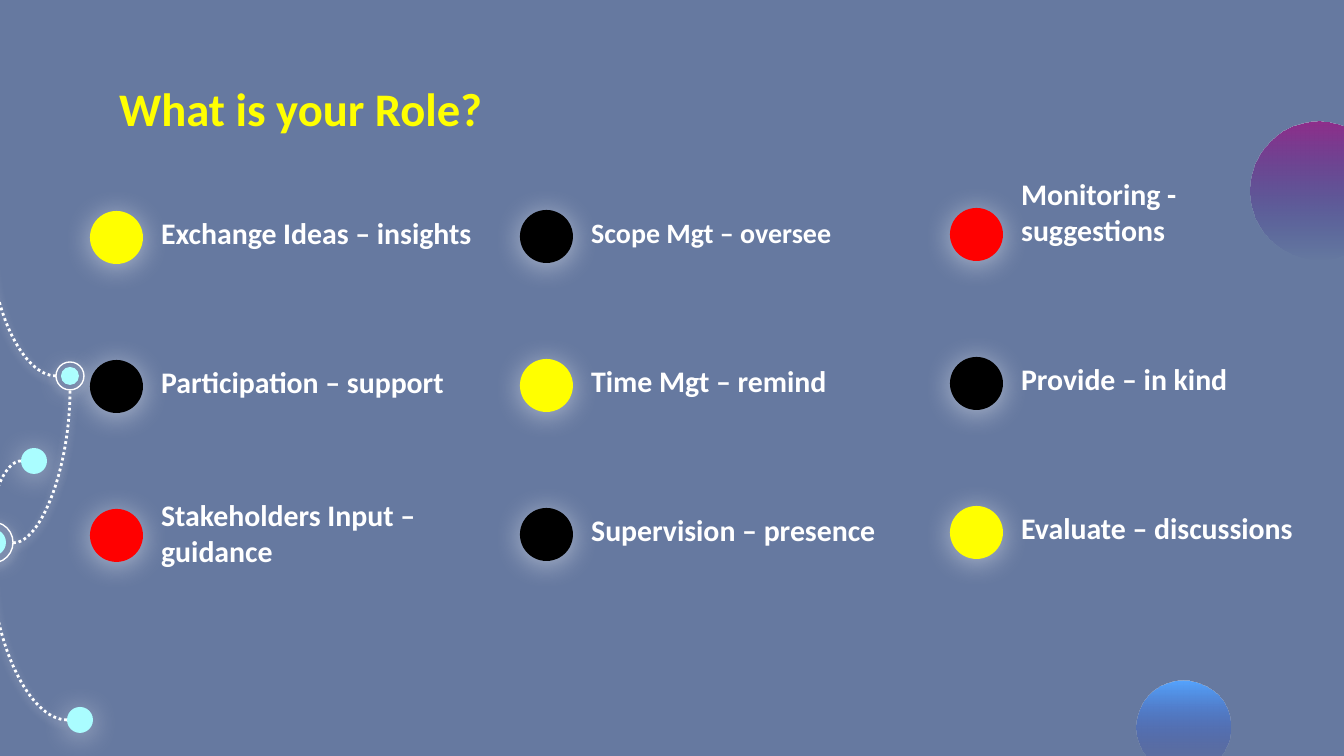
from lxml import etree
from pptx import Presentation
from pptx.dml.color import RGBColor
from pptx.enum.dml import MSO_LINE
from pptx.enum.shapes import MSO_CONNECTOR, MSO_SHAPE
from pptx.enum.text import MSO_ANCHOR
from pptx.oxml.ns import qn
from pptx.util import Pt

PX = 914400 / 134.4
CURVE = MSO_CONNECTOR.CURVE
OVAL = MSO_SHAPE.OVAL
DOTTED = MSO_LINE.ROUND_DOT
TOP, BOTTOM = MSO_ANCHOR.TOP, MSO_ANCHOR.BOTTOM

BACKGROUND = RGBColor(0x66, 0x79, 0xA0)
WHITE = RGBColor(0xFF, 0xFF, 0xFF)
YELLOW = RGBColor(0xFF, 0xFF, 0x00)
BLACK = RGBColor(0x00, 0x00, 0x00)
RED = RGBColor(0xFF, 0x00, 0x00)
CYAN = RGBColor(0xAA, 0xFD, 0xFF)
SKY = RGBColor(0x55, 0xA4, 0xFF)
PURPLE = RGBColor(0x8F, 0x2E, 0x8B)
INDIGO = RGBColor(0x2E, 0x2E, 0x8F)

TITLE = "What is your Role?"
COLUMNS = [
    {"top": 211, "width": 354, "roles": [
        ("Exchange Ideas – insights", YELLOW, 16, 0),
        ("Participation – support", BLACK, 16, 0),
        ("Stakeholders Input – guidance", RED, 16, 20)]},
    {"top": 210, "width": 354, "roles": [
        ("Scope Mgt – oversee", BLACK, 15, 0),
        ("Time Mgt – remind", YELLOW, 16, 0),
        ("Supervision – presence", BLACK, 16, 0)]},
    {"top": 208, "width": 303, "roles": [
        ("Monitoring - suggestions", RED, 16, 0),
        ("Provide – in kind", BLACK, 16, 0),
        ("Evaluate – discussions", YELLOW, 16, 0)]},
]
GRID_LEFT, COLUMN_STEP, ROW_STEP = 90, 430, 149
MARKER, LABEL_INDENT, LABEL_HEIGHT = 53, 58, 75

PLANETS = [(1137, 681, 93, SKY), (1250, 122, 137, PURPLE)]
END_DOTS = [(21, 448, 26), (67, 707, 26)]
ORBITS = [
    ((21, 461), (-8, 523), False),
    ((56, 376), (-8, 247), True),
    ((13, 543), (70, 390), True),
    ((67, 720), (-8, 563), True),
]
RING_DOTS = [(-21, 529, 27), (61, 367, 18)]
RINGS = [(-28, 522, 41), (56, 362, 28)]
WIDE_GLOW, SLIM_GLOW = 15.8, 4.5


def px(value):
    return round(value * PX)


def add_effects(shape, blur=None):
    effects = etree.SubElement(shape._element.spPr, qn("a:effectLst"))
    if blur:
        shadow = etree.SubElement(
            effects, qn("a:outerShdw"), blurRad=str(Pt(blur)), dist=str(Pt(1.5)),
            dir="5400000", algn="bl", rotWithShape="0")
        color = etree.SubElement(shadow, qn("a:srgbClr"), val=str(WHITE))
        etree.SubElement(color, qn("a:alpha"), val="50000")


def add_circle(slide, left, top, size):
    return slide.shapes.add_shape(OVAL, px(left), px(top), px(size), px(size))


def add_dot(slide, left, top, size, color):
    dot = add_circle(slide, left, top, size)
    dot.fill.solid()
    dot.fill.fore_color.rgb = color
    dot.line.fill.background()
    add_effects(dot, WIDE_GLOW)


def add_ring(slide, left, top, size):
    ring = add_circle(slide, left, top, size)
    ring.fill.background()
    ring.line.color.rgb = WHITE
    ring.line.width = Pt(0.75)
    add_effects(ring, SLIM_GLOW)


def add_planet(slide, left, top, size, color):
    planet = add_circle(slide, left, top, size)
    planet.shadow.inherit = False
    planet.line.fill.background()
    planet.fill.gradient()
    planet.fill.gradient_angle = 270
    first, last = planet.fill.gradient_stops
    first.position, last.position = 0, 1
    first.color.rgb, last.color.rgb = color, INDIGO
    faded = planet._element.spPr.findall(".//" + qn("a:srgbClr"))[-1]
    etree.SubElement(faded, qn("a:alpha"), val="0")


def add_orbit(slide, start, end, glows):
    orbit = slide.shapes.add_connector(CURVE, *map(px, start + end))
    orbit._element.spPr.find(qn("a:prstGeom")).set("prst", "curvedConnector2")
    orbit.line.color.rgb = WHITE
    orbit.line.width = Pt(1.5)
    orbit.line.dash_style = DOTTED
    add_effects(orbit, SLIM_GLOW if glows else None)


def add_label(slide, text, box, size, color, anchor):
    frame = slide.shapes.add_textbox(*map(px, box)).text_frame
    frame.word_wrap = True
    frame.vertical_anchor = anchor
    frame.margin_left = frame.margin_right = px(13.44)
    frame.margin_top = frame.margin_bottom = px(13.44)
    paragraph = frame.paragraphs[0]
    paragraph.text = text
    paragraph.font.name = "Calibri"
    paragraph.font.size = Pt(size)
    paragraph.font.bold = True
    paragraph.font.color.rgb = color


def main():
    presentation = Presentation()
    presentation.slide_width, presentation.slide_height = px(1344), px(756)
    slide = presentation.slides.add_slide(presentation.slide_layouts[6])
    slide.background.fill.solid()
    slide.background.fill.fore_color.rgb = BACKGROUND

    for planet in PLANETS:
        add_planet(slide, *planet)
    for dot in END_DOTS:
        add_dot(slide, *dot, CYAN)
    for orbit in ORBITS:
        add_orbit(slide, *orbit)
    for dot, ring in zip(RING_DOTS, RINGS):
        add_dot(slide, *dot, CYAN)
        add_ring(slide, *ring)

    add_label(slide, TITLE, (106, 66, 1133, 85), 25, YELLOW, TOP)
    for column_index, column in enumerate(COLUMNS):
        left = GRID_LEFT + column_index * COLUMN_STEP
        for row_index, (text, color, size, drop) in enumerate(column["roles"]):
            top = column["top"] + row_index * ROW_STEP
            label_top = top + MARKER - LABEL_HEIGHT + drop
            box = (left + LABEL_INDENT, label_top, column["width"], LABEL_HEIGHT)
            add_label(slide, text, box, size, WHITE, BOTTOM)
            add_dot(slide, left, top, MARKER, color)

    presentation.save("out.pptx")


if __name__ == "__main__":
    main()
